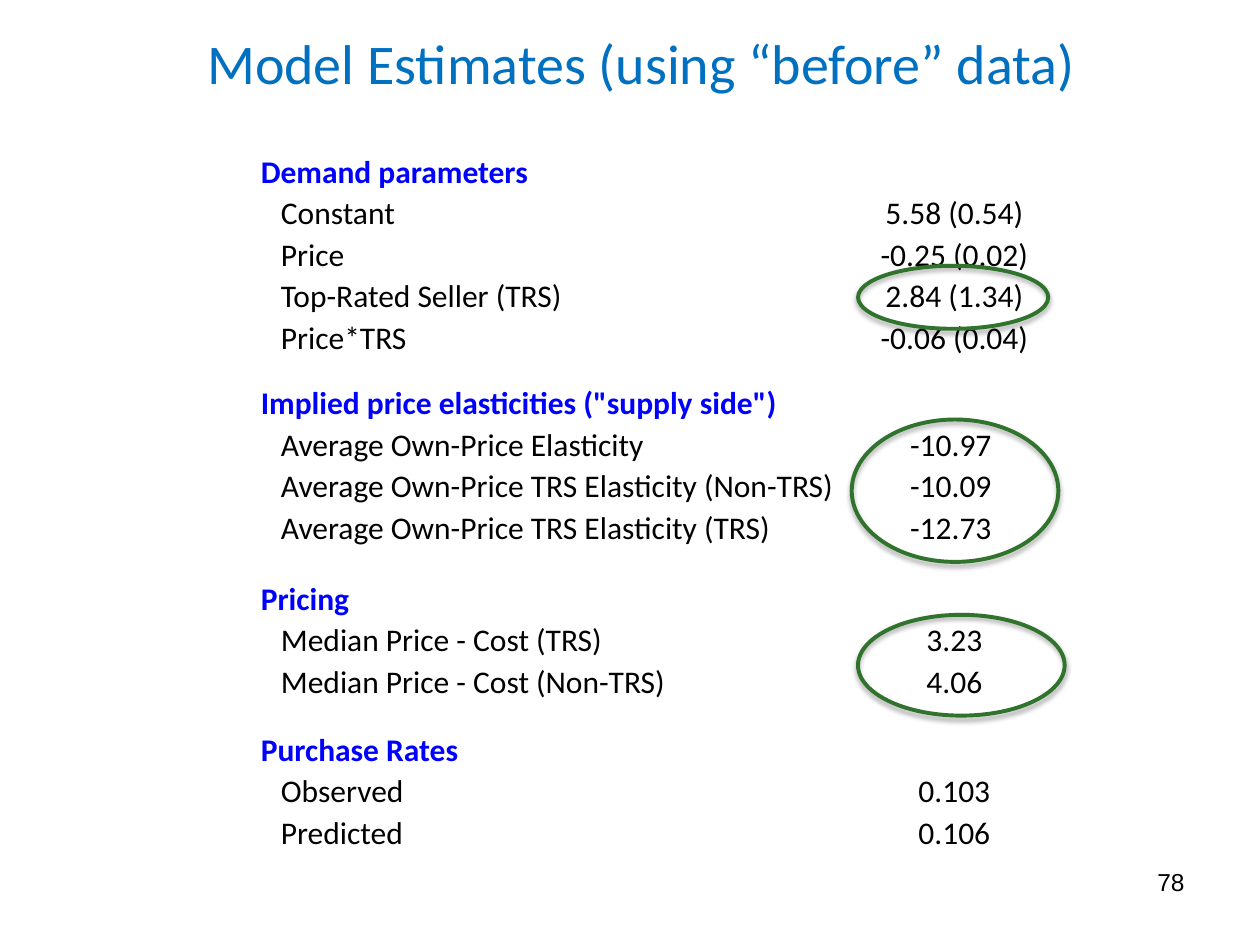
from lxml import etree
from pptx import Presentation
from pptx import util as u
from pptx.dml.color import RGBColor
from pptx.enum import shapes, text
from pptx.oxml.ns import qn

TITLE = "Model Estimates (using “before” data)"
PAGE = "78"
BLUE, HEADING, BLACK, GREEN = "0070C0", "0000FF", "000000", "2F732C"

# (heading, heading row height, [(label, value)])
SECTIONS = [
    ("Demand parameters", 0.33, [
        ("Constant", "5.58 (0.54)"),
        ("Price", "-0.25 (0.02)"),
        ("Top-Rated Seller (TRS)", "2.84 (1.34)"),
        ("Price*TRS", "-0.06 (0.04)")]),
    ('Implied price elasticities ("supply side")', 0.52, [
        ("Average Own-Price Elasticity", "-10.97 "),
        ("Average Own-Price TRS Elasticity (Non-TRS)", "-10.09 "),
        ("Average Own-Price TRS Elasticity (TRS)", "-12.73 ")]),
    ("Pricing", 0.56, [
        ("Median Price - Cost (TRS)", "3.23"),
        ("Median Price - Cost (Non-TRS)", "4.06")]),
    ("Purchase Rates", 0.54, [
        ("Observed", "0.103"),
        ("Predicted", "0.106")]),
]
COLUMNS = [0.16, 4.52, 1.67]
ROW = 0.33
TABLE_LEFT, TABLE_TOP = 2.06, 1.19
# Highlight ovals: left, top, width, height
OVALS = [(6.81, 2.11, 1.51, 0.5), (6.76, 3.33, 1.64, 1.13), (6.81, 4.88, 1.64, 0.8)]


def rgb(color):
    return RGBColor.from_string(color)


def write(tf, words, size, color, align, font="Calibri", bold=False):
    tf.text = words
    p = tf.paragraphs[0]
    p.alignment = align
    f = p.runs[0].font
    f.name, f.size, f.bold = font, u.Pt(size), bold
    f.color.rgb = rgb(color)


def add_shadow(sp):
    sp.shadow.inherit = False
    effects = sp._element.spPr.find(qn("a:effectLst"))
    shadow = etree.SubElement(effects, qn("a:outerShdw"), blurRad=str(u.Pt(3.1)),
                              dist=str(u.Pt(1.8)), dir="5400000", rotWithShape="0")
    color = etree.SubElement(shadow, qn("a:srgbClr"), val=BLACK)
    etree.SubElement(color, qn("a:alpha"), val="35000")


def add_estimates(s):
    rows = []
    for heading, height, items in SECTIONS:
        rows.append((height, heading, None))
        rows += [(ROW, label, value) for label, value in items]
    heights = [row[0] for row in rows]
    frame = s.shapes.add_table(len(rows), len(COLUMNS), u.Inches(TABLE_LEFT), u.Inches(TABLE_TOP),
                               u.Inches(sum(COLUMNS)), u.Inches(sum(heights)))
    table = frame.table
    table.first_row = table.horz_banding = False
    for column, width in zip(table.columns, COLUMNS):
        column.width = u.Inches(width)
    for cell in table.iter_cells():
        cell.fill.background()
        cell.vertical_anchor = text.MSO_ANCHOR.BOTTOM
        cell.margin_left = cell.margin_right = cell.margin_top = u.Inches(0.01)
        cell.margin_bottom = 0
    for i, (height, label, value) in enumerate(rows):
        table.rows[i].height = u.Inches(height)
        if value is None:
            table.cell(i, 0).merge(table.cell(i, 1))
            write(table.cell(i, 0).text_frame, label, 18, HEADING, text.PP_ALIGN.LEFT, bold=True)
        else:
            write(table.cell(i, 1).text_frame, label, 18, BLACK, text.PP_ALIGN.LEFT)
            write(table.cell(i, 2).text_frame, value, 18, BLACK, text.PP_ALIGN.CENTER)


def main():
    prs = Presentation()
    prs.slide_width, prs.slide_height = u.Inches(10), u.Inches(7.5)
    s = prs.slides.add_slide(prs.slide_layouts[5])

    # Title
    title = s.shapes.title
    title.left, title.top, title.width, title.height = map(u.Inches, (0.59, 0, 9, 0.99))
    title.text_frame.vertical_anchor = text.MSO_ANCHOR.MIDDLE
    write(title.text_frame, TITLE, 32, BLUE, text.PP_ALIGN.CENTER)

    # Page number
    box = s.shapes.add_textbox(*map(u.Inches, (7.17, 6.83, 2.33, 0.52)))
    box.text_frame.word_wrap = True
    write(box.text_frame, PAGE, 14, BLACK, text.PP_ALIGN.RIGHT, font="Arial")

    # Estimates table
    add_estimates(s)

    # Ovals around the key estimates
    for oval in OVALS:
        sp = s.shapes.add_shape(shapes.MSO_SHAPE.OVAL, *map(u.Inches, oval))
        sp.fill.background()
        sp.line.color.rgb = rgb(GREEN)
        sp.line.width = u.Pt(2.25)
        add_shadow(sp)

    prs.save("out.pptx")


if __name__ == "__main__":
    main()
